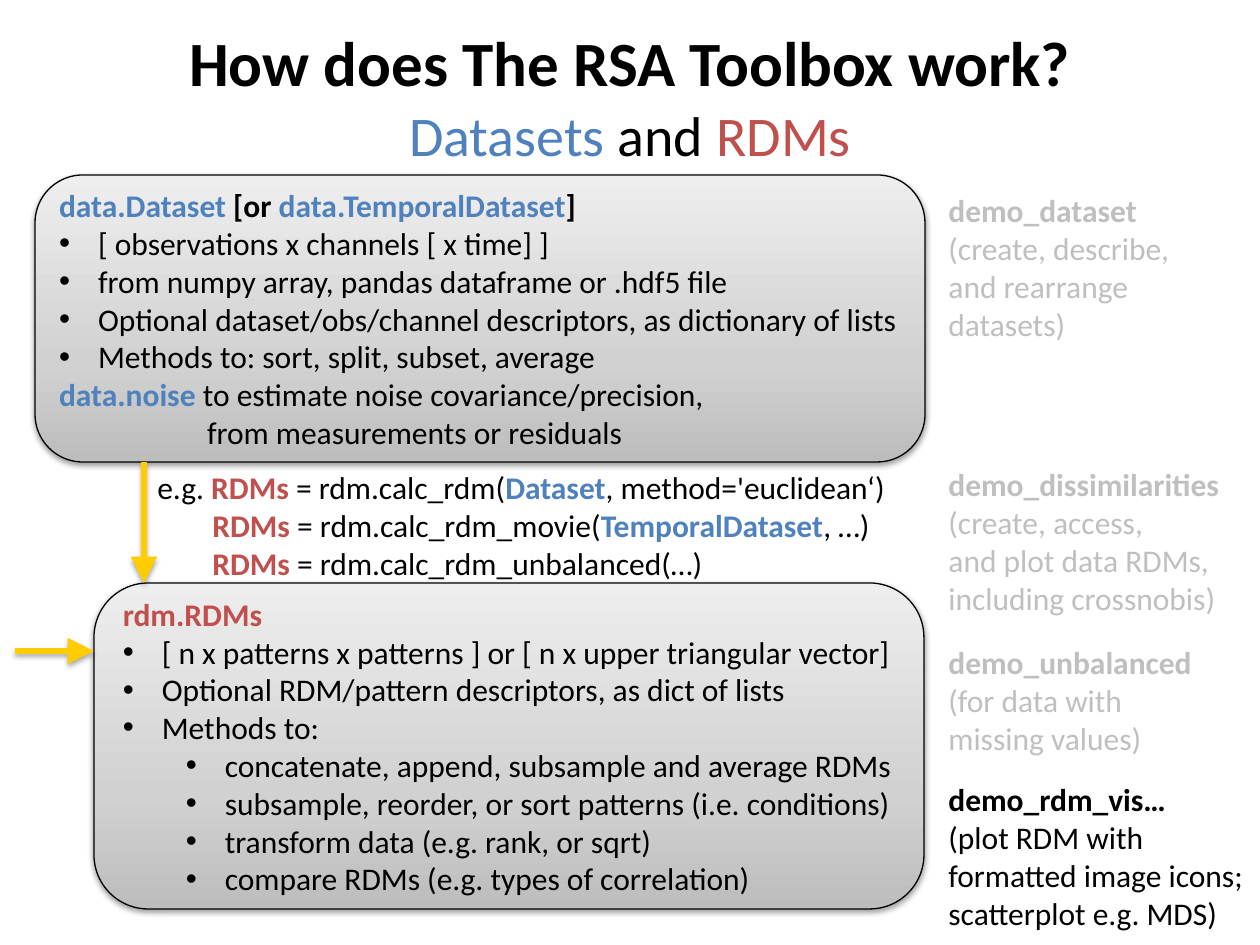
from lxml import etree
from pptx import Presentation
from pptx.dml.color import RGBColor
from pptx.enum.shapes import MSO_CONNECTOR, MSO_SHAPE
from pptx.enum.text import MSO_ANCHOR, MSO_AUTO_SIZE, PP_ALIGN
from pptx.oxml.ns import qn
from pptx.util import Emu, Pt

ROUNDED = MSO_SHAPE.ROUNDED_RECTANGLE
STRAIGHT = MSO_CONNECTOR.STRAIGHT
MIDDLE, TOP = MSO_ANCHOR.MIDDLE, MSO_ANCHOR.TOP
CENTER, LEFT = PP_ALIGN.CENTER, PP_ALIGN.LEFT
NO_FIT = MSO_AUTO_SIZE.NONE

FONT = "Calibri"
BLACK = RGBColor(0x00, 0x00, 0x00)
BLUE = RGBColor(0x4F, 0x81, 0xBD)
RED = RGBColor(0xC0, 0x50, 0x4D)
GREY = RGBColor(0xBF, 0xBF, 0xBF)
YELLOW = RGBColor(0xFF, 0xCC, 0x00)
GRADIENT = (
    (0, RGBColor(0xBD, 0xBD, 0xBD)),
    (35, RGBColor(0xD1, 0xD1, 0xD1)),
    (100, RGBColor(0xEE, 0xEE, 0xEE)),
)
BULLET_INDENTS = (39, 102)
HANGING = 39
NOTE_LEFT = 936
NOTE_LINE = 38

DATASET_LINES = (
    [("data.Dataset", BLUE, True), (" [or ", BLACK, True),
     ("data.TemporalDataset", BLUE, True), ("]", BLACK, True)],
    (0, "[ observations x channels [ x time] ]"),
    (0, "from numpy array, pandas dataframe or .hdf5 file"),
    (0, "Optional dataset/obs/channel descriptors, as dictionary of lists"),
    (0, "Methods to: sort, split, subset, average"),
    [("data.noise", BLUE, True),
     (" to estimate noise covariance/precision,", BLACK, False)],
)
RDM_LINES = (
    [("rdm.RDMs", RED, True)],
    (0, "[ n x patterns x patterns ] or [ n x upper triangular vector]"),
    (0, "Optional RDM/pattern descriptors, as dict of lists"),
    (0, "Methods to:"),
    (1, "concatenate, append, subsample and average RDMs"),
    (1, "subsample, reorder, or sort patterns (i.e. conditions)"),
    (1, "transform data (e.g. rank, or sqrt)"),
    (1, "compare RDMs (e.g. types of correlation)"),
)
CALCULATIONS = (
    (71, [("e.g. ", BLACK, False), ("RDMs ", RED, True),
          ("= rdm.calc_rdm(", BLACK, False), ("Dataset", BLUE, True),
          (", method='euclidean‘)", BLACK, False)]),
    (126, [("RDMs ", RED, True), ("= rdm.calc_rdm_movie(", BLACK, False),
           ("TemporalDataset", BLUE, True), (", …)", BLACK, False)]),
    (126, [("RDMs", RED, True), (" = rdm.calc_rdm_unbalanced(…)", BLACK, False)]),
)
DEMO_NOTES = (
    (185, 256, GREY, ("demo_dataset", "(create, describe,", "and rearrange", "datasets)")),
    (459, 299, GREY, ("demo_dissimilarities", "(create, access,",
                      "and plot data RDMs,", "including crossnobis)")),
    (637, 271, GREY, ("demo_unbalanced", "(for data with", "missing values)")),
    (774, 324, BLACK, ("demo_rdm_vis…", "(plot RDM with",
                       "formatted image icons;", "scatterplot e.g. MDS)")),
)


def px(value):
    return Emu(round(value * 914400 / 126))


def add_paragraph(frame, runs, size=18, align=LEFT, indent=0, bullet=False):
    first = frame.paragraphs[0]
    paragraph = frame.add_paragraph() if first.runs else first
    paragraph.alignment = align
    properties = paragraph._p.get_or_add_pPr()
    if indent:
        properties.set("marL", str(px(indent)))
        properties.set("indent", str(px(-HANGING) if bullet else 0))
    if bullet:
        etree.SubElement(properties, qn("a:buFont"), typeface="Arial")
        etree.SubElement(properties, qn("a:buChar"), char="•")
    for text, color, bold in runs:
        run = paragraph.add_run()
        run.text = text
        run.font.name = FONT
        run.font.size = Pt(size)
        run.font.bold = bold
        run.font.color.rgb = color


def add_lines(frame, lines):
    for line in lines:
        if isinstance(line, list):
            add_paragraph(frame, line)
        else:
            level, text = line
            add_paragraph(frame, [(text, BLACK, False)],
                          indent=BULLET_INDENTS[level], bullet=True)


def add_shadow(shape, distance, opacity):
    properties = shape._element.spPr
    effects = properties.find(qn("a:effectLst"))
    if effects is None:
        effects = etree.SubElement(properties, qn("a:effectLst"))
    shadow = etree.SubElement(
        effects, qn("a:outerShdw"), blurRad=str(Pt(3.1)), dist=str(Pt(distance)),
        dir="5400000", rotWithShape="0")
    color = etree.SubElement(shadow, qn("a:srgbClr"), val=str(BLACK))
    etree.SubElement(color, qn("a:alpha"), val=str(opacity * 1000))


def fill_gradient(shape):
    shape.fill.gradient()
    shape.fill.gradient_angle = 90
    stops = shape._element.spPr.find(qn("a:gradFill")).find(qn("a:gsLst"))
    for stop in list(stops):
        stops.remove(stop)
    for position, color in GRADIENT:
        stop = etree.SubElement(stops, qn("a:gs"), pos=str(position * 1000))
        etree.SubElement(stop, qn("a:srgbClr"), val=str(color))


def add_panel(slide, left, top, width, height, side_margin, lines):
    shape = slide.shapes.add_shape(ROUNDED, px(left), px(top), px(width), px(height))
    fill_gradient(shape)
    shape.line.color.rgb = BLACK
    shape.line.width = Pt(0.75)
    shape.shadow.inherit = False
    add_shadow(shape, 1.6, 38)
    frame = shape.text_frame
    frame.word_wrap = True
    frame.vertical_anchor = MIDDLE
    frame.margin_left = frame.margin_right = px(side_margin)
    add_lines(frame, lines)
    return frame


def add_text_box(slide, left, top, width, height, wrap=True, anchor=TOP):
    box = slide.shapes.add_textbox(px(left), px(top), px(width), px(height))
    frame = box.text_frame
    frame.word_wrap = wrap
    frame.vertical_anchor = anchor
    return frame


def add_arrow(slide, start_x, start_y, end_x, end_y):
    arrow = slide.shapes.add_connector(
        STRAIGHT, px(start_x), px(start_y), px(end_x), px(end_y))
    arrow.line.color.rgb = YELLOW
    arrow.line.width = Pt(3)
    line = arrow._element.spPr.find(qn("a:ln"))
    etree.SubElement(line, qn("a:tailEnd"), type="triangle", w="lg", len="lg")
    add_shadow(arrow, 1.8, 35)


def add_titles(slide):
    title = slide.shapes.title
    title.left, title.top, title.width, title.height = map(px, (63, 104, 1134, 60))
    frame = title.text_frame
    frame.auto_size = NO_FIT
    frame.vertical_anchor = MIDDLE
    add_paragraph(frame, [("Datasets ", BLUE, False), ("and ", BLACK, False),
                          ("RDMs", RED, False)], 32, CENTER)
    heading = add_text_box(slide, 63, 37, 1134, 48, anchor=MIDDLE)
    add_paragraph(heading, [("How does The RSA Toolbox work?", BLACK, True)], 36, CENTER)


def add_note(slide, top, width, color, lines):
    height = NOTE_LINE * len(lines) + 13
    frame = add_text_box(slide, NOTE_LEFT, top, width, height, wrap=False)
    for index, text in enumerate(lines):
        add_paragraph(frame, [(text, color, index == 0)])


def main():
    presentation = Presentation()
    presentation.slide_width, presentation.slide_height = px(1260), px(945)
    slide = presentation.slides.add_slide(presentation.slide_layouts[5])
    add_titles(slide)
    dataset = add_panel(slide, 35, 175, 890, 287, 10, DATASET_LINES)
    add_paragraph(dataset, [("from measurements or residuals", BLACK, False)], indent=148)
    calculations = add_text_box(slide, 74, 462, 834, 127)
    for indent, runs in CALCULATIONS:
        add_paragraph(calculations, runs, indent=indent)
    add_panel(slide, 94, 583, 830, 326, 13, RDM_LINES)
    add_arrow(slide, 144, 462, 144, 583)
    for note in DEMO_NOTES:
        add_note(slide, *note)
    add_arrow(slide, 15, 651, 94, 651)
    presentation.save("out.pptx")


if __name__ == "__main__":
    main()
